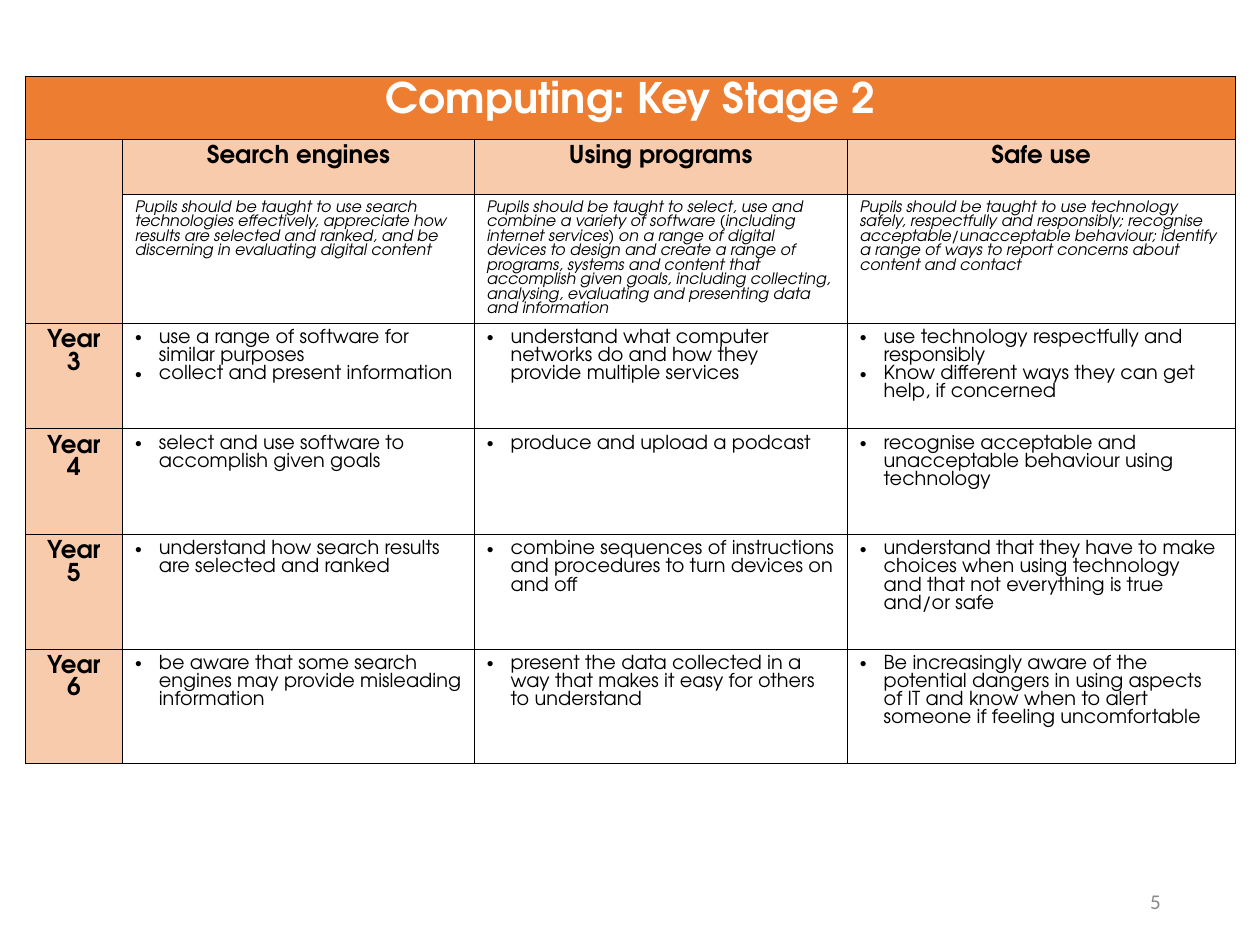
from lxml import etree
from pptx import Presentation
from pptx import util as u
from pptx.dml.color import RGBColor
from pptx.enum import text
from pptx.oxml.ns import qn

COLORS = {"title": "ED7D31", "label": "F8CBAD", "line": "000000",
          "text": "000000", "white": "FFFFFF", "number": "898989"}
FONT = "TeX Gyre Adventor"
COL_WIDTHS = [1.96, 7.09, 7.52, 7.82]
ROW_HEIGHTS = [1.27, 1.12, 1.96, 2.13, 2.13, 2.31, 2.31]

STRANDS = [
    ("Search engines",
     "Pupils should be taught to use search technologies effectively, appreciate how "
     "results are selected and ranked, and be discerning in evaluating digital content"),
    ("Using programs",
     "Pupils should be taught to select, use and combine a variety of software (including "
     "internet services) on a range of digital devices to design and create a range of "
     "programs, systems and content that accomplish given goals, including collecting, "
     "analysing, evaluating and presenting data and information"),
    ("Safe use",
     "Pupils should be taught to use technology safely, respectfully and responsibly; "
     "recognise acceptable/unacceptable behaviour; identify a range of ways to report "
     "concerns about content and contact"),
]
YEARS = {
    "Year 3": [
        ["use a range of software for similar purposes", "collect and present information"],
        ["understand what computer networks do and how they provide multiple services"],
        ["use technology respectfully and responsibly",
         "Know different ways they can get help, if concerned"],
    ],
    "Year 4": [
        ["select and use software to accomplish given goals"],
        ["produce and upload a podcast"],
        ["recognise acceptable and unacceptable behaviour using technology"],
    ],
    "Year 5": [
        ["understand how search results are selected and ranked"],
        ["combine sequences of instructions and procedures to turn devices on and off"],
        ["understand that they have to make choices when using technology and that not "
         "everything is true and/or safe"],
    ],
    "Year 6": [
        ["be aware that some search engines may provide misleading information"],
        ["present the data collected in a way that makes it easy for others to understand"],
        ["Be increasingly aware of the potential dangers in using aspects of IT and know "
         "when to alert someone if feeling uncomfortable"],
    ],
}


def rgb(name):
    return RGBColor.from_string(COLORS[name])


def style_text(tf, size, color="text", font=FONT, bold=False, italic=False, align=None):
    for p in tf.paragraphs:
        p.alignment = align
        for r in p.runs:
            r.font.size = u.Pt(size)
            r.font.name = font
            r.font.bold = bold
            r.font.italic = italic
            r.font.color.rgb = rgb(color)


def add_bullets(tf):
    for p in tf.paragraphs:
        pPr = p._p.get_or_add_pPr()
        pPr.set("marL", str(u.Cm(0.48)))
        pPr.set("indent", str(-u.Cm(0.48)))
        etree.SubElement(pPr, qn("a:buFont")).set("typeface", "Arial")
        etree.SubElement(pPr, qn("a:buChar")).set("char", "•")


def add_borders(cell):
    tcPr = cell._tc.get_or_add_tcPr()
    for side in "LRTB":
        ln = etree.SubElement(tcPr, qn(f"a:ln{side}"), w=str(u.Pt(0.5)))
        fill = etree.SubElement(ln, qn("a:solidFill"))
        etree.SubElement(fill, qn("a:srgbClr"), val=COLORS["line"])


def fill_cell(cell, name):
    cell.fill.solid()
    cell.fill.fore_color.rgb = rgb(name)


def set_label(cell, label, size=14, color="text", fill="label"):
    cell.text_frame.text = label
    style_text(cell.text_frame, size, color, bold=True, align=text.PP_ALIGN.CENTER)
    fill_cell(cell, fill)


def add_grid(slide):
    frame = slide.shapes.add_table(
        len(ROW_HEIGHTS), len(COL_WIDTHS), u.Cm(0.51), u.Cm(1.53),
        u.Cm(sum(COL_WIDTHS)), u.Cm(sum(ROW_HEIGHTS)))
    table = frame.table
    table.first_row = table.horz_banding = False
    for col, width in zip(table.columns, COL_WIDTHS):
        col.width = u.Cm(width)
    for row, height in zip(table.rows, ROW_HEIGHTS):
        row.height = u.Cm(height)
    for cell in table.iter_cells():
        add_borders(cell)
        cell.fill.background()
    table.cell(0, 0).merge(table.cell(0, 3))
    table.cell(1, 0).merge(table.cell(2, 0))
    return table


def fill_grid(table):
    set_label(table.cell(0, 0), "Computing: Key Stage 2", 24, "white", "title")
    fill_cell(table.cell(1, 0), "label")
    for col, (heading, aim) in enumerate(STRANDS, 1):
        set_label(table.cell(1, col), heading)
        tf = table.cell(2, col).text_frame
        tf.text = aim
        style_text(tf, 9, italic=True)
    for row, (year, goals) in enumerate(YEARS.items(), 3):
        cell = table.cell(row, 0)
        set_label(cell, year)
        cell._tc.tcPr.set("vert", "eaVert")
        for col, items in enumerate(goals, 1):
            tf = table.cell(row, col).text_frame
            tf.text = "\n".join(items)
            style_text(tf, 11)
            add_bullets(tf)


def add_page_number(slide, number):
    sp = slide.shapes.add_textbox(u.Cm(17.93), u.Cm(17.65), u.Cm(5.72), u.Cm(1.02))
    tf = sp.text_frame
    tf.word_wrap = True
    tf.vertical_anchor = text.MSO_ANCHOR.MIDDLE
    tf.text = number
    style_text(tf, 12, "number", "Calibri", align=text.PP_ALIGN.RIGHT)


def main():
    prs = Presentation()
    prs.slide_width, prs.slide_height = u.Cm(25.4), u.Cm(19.05)
    s = prs.slides.add_slide(prs.slide_layouts[6])
    fill_grid(add_grid(s))
    add_page_number(s, "5")
    prs.save("out.pptx")


if __name__ == "__main__":
    main()
